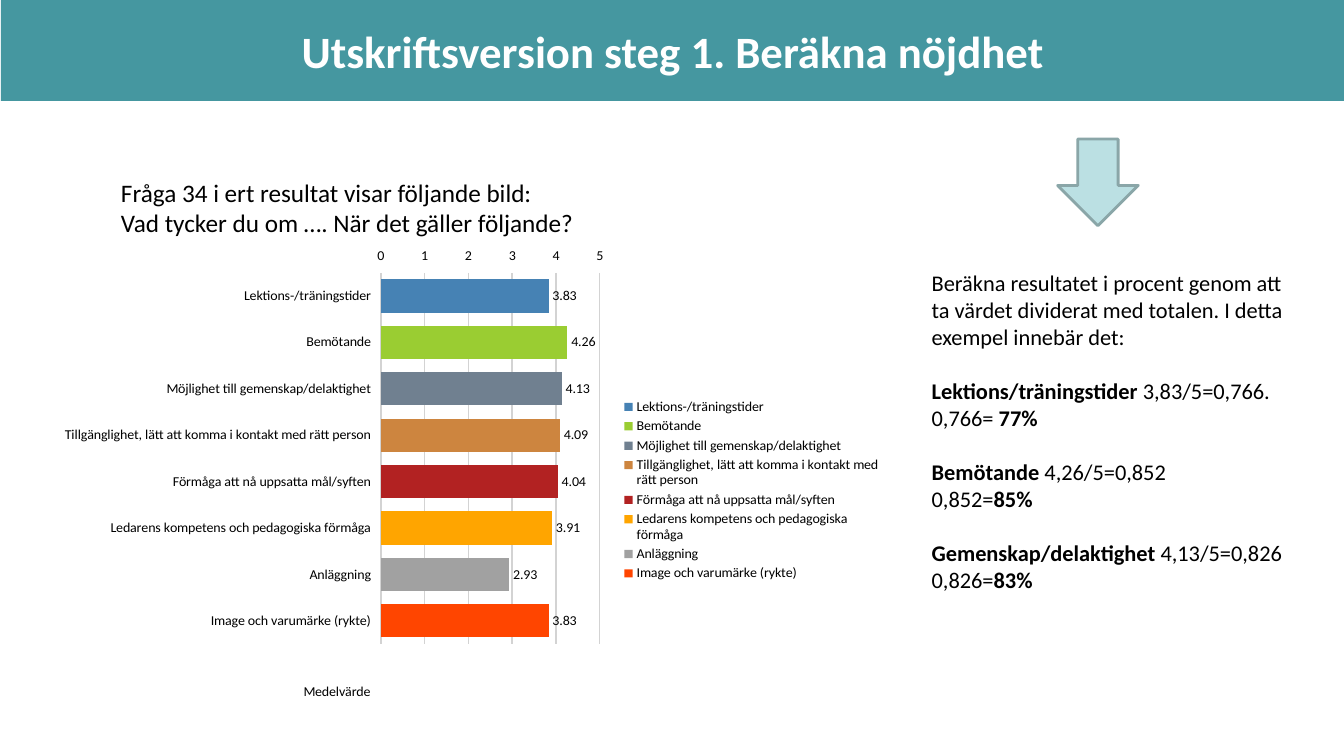
import pptx
import pptx.chart.data
import pptx.dml.color
import pptx.enum.chart
import pptx.enum.shapes
import pptx.enum.text
import pptx.oxml
import pptx.oxml.ns
import pptx.util
from dataclasses import dataclass

Inches = pptx.util.Inches
Pt = pptx.util.Pt
XL = pptx.enum.chart


@dataclass(frozen=True)
class Theme:
    font: str = "Calibri"
    text: str = "000000"
    light: str = "FFFFFF"
    bar: str = "4597A0"
    arrow: str = "BBE0E3"
    arrow_line: str = "8AA6A8"
    grid: str = "D3D3D3"
    title_size: int = 32
    intro_size: int = 18
    body_size: int = 16
    chart_size: int = 10
    gap: float = 19.5


THEME = Theme()

RATINGS = [
    ("Lektions-/träningstider", 3.83, "4682B4"),
    ("Bemötande", 4.26, "9ACD32"),
    ("Möjlighet till gemenskap/delaktighet", 4.13, "708090"),
    ("Tillgänglighet, lätt att komma i kontakt med rätt person", 4.09, "CD853F"),
    ("Förmåga att nå uppsatta mål/syften", 4.04, "B22222"),
    ("Ledarens kompetens och pedagogiska förmåga", 3.91, "FFA500"),
    ("Anläggning", 2.93, "A1A1A1"),
    ("Image och varumärke (rykte)", 3.83, "FF4500"),
]

INTRO = [
    (0, [("Fråga 34 i ert resultat visar följande bild:", False)]),
    (0, [("Vad tycker du om …. När det gäller följande?", False)]),
]

CALCULATION = [
    (0, [("Beräkna resultatet i procent genom att ta värdet dividerat med "
          "totalen. I detta exempel innebär det:", False)]),
    (THEME.gap, [("Lektions/träningstider ", True), ("3,83/5=0,766.", False)]),
    (0, [("0,766= ", False), ("77%", True)]),
    (THEME.gap, [("Bemötande", True), (" 4,26/5=0,852", False)]),
    (0, [("0,852=", False), ("85%", True)]),
    (THEME.gap, [("Gemenskap/delaktighet ", True),
                 ("4,13/5=0,826 0,826=", False), ("83%", True)]),
]


def rgb(value):
    return pptx.dml.color.RGBColor.from_string(value)


def apply(obj, values):
    for name, value in values.items():
        setattr(obj, name, value)


def set_font(font, size, color=THEME.text, bold=False):
    apply(font, {"name": THEME.font, "size": Pt(size), "bold": bold})
    font.color.rgb = rgb(color)


def place(sp, box):
    apply(sp, dict(zip(("left", "top", "width", "height"), map(Inches, box))))


def set_layout(parent, index, frame, inner=False):
    for old in parent.findall(pptx.oxml.ns.qn("c:layout")):
        parent.remove(old)
    target = '<c:layoutTarget val="inner"/>' if inner else ""
    modes = "".join(f'<c:{k}Mode val="edge"/>' for k in "xy")
    sizes = "".join(f'<c:{k} val="{v}"/>' for k, v in zip("xywh", frame))
    parent.insert(index, pptx.oxml.parse_xml(
        f'<c:layout {pptx.oxml.ns.nsdecls("c")}><c:manualLayout>'
        f"{target}{modes}{sizes}</c:manualLayout></c:layout>"))


def add_title_bar(slide, box, text):
    sp = slide.shapes.title
    place(sp, box)
    sp.fill.solid()
    sp.fill.fore_color.rgb = rgb(THEME.bar)
    tf = sp.text_frame
    apply(tf, {"text": text, "word_wrap": True,
               "auto_size": pptx.enum.text.MSO_AUTO_SIZE.NONE,
               "vertical_anchor": pptx.enum.text.MSO_ANCHOR.MIDDLE})
    p = tf.paragraphs[0]
    p.alignment = pptx.enum.text.PP_ALIGN.CENTER
    set_font(p.runs[0].font, THEME.title_size, THEME.light, True)


def add_body(sp, box, paragraphs, size):
    place(sp, box)
    tf = sp.text_frame
    apply(tf, {"word_wrap": True,
               "auto_size": pptx.enum.text.MSO_AUTO_SIZE.NONE,
               "vertical_anchor": pptx.enum.text.MSO_ANCHOR.TOP})
    for i, (before, runs) in enumerate(paragraphs):
        p = tf.add_paragraph() if i else tf.paragraphs[0]
        pPr = p._p.get_or_add_pPr()
        pPr.set("marL", "0")
        pPr.set("indent", "0")
        pPr.append(pptx.oxml.parse_xml(f'<a:buNone {pptx.oxml.ns.nsdecls("a")}/>'))
        apply(p, {"space_before": Pt(before), "space_after": Pt(0),
                  "alignment": pptx.enum.text.PP_ALIGN.LEFT})
        for text, bold in runs:
            r = p.add_run()
            r.text = text
            set_font(r.font, size, bold=bold)


def add_rating_chart(slide, box):
    names, values, colors = zip(*RATINGS)
    data = pptx.chart.data.CategoryChartData()
    data.categories = names
    data.add_series("Column02", values)
    chart = slide.shapes.add_chart(
        XL.XL_CHART_TYPE.BAR_CLUSTERED, *map(Inches, box), data).chart
    set_font(chart.font, THEME.chart_size)
    apply(chart, {"has_title": False, "has_legend": True})

    plot = chart.plots[0]
    apply(plot, {"gap_width": 40, "vary_by_categories": True,
                 "has_data_labels": True})
    labels = plot.data_labels
    apply(labels, {"show_value": True, "number_format": "0.00",
                   "number_format_is_linked": False,
                   "position": XL.XL_LABEL_POSITION.OUTSIDE_END})
    set_font(labels.font, THEME.chart_size)
    series = plot.series[0]
    series.format.fill.solid()
    series.format.fill.fore_color.rgb = rgb(colors[0])
    for i, color in enumerate(colors):
        fill = series.points[i].format.fill
        fill.solid()
        fill.fore_color.rgb = rgb(color)

    cat, val = chart.category_axis, chart.value_axis
    apply(cat, {"reverse_order": True, "crosses": XL.XL_AXIS_CROSSES.MAXIMUM})
    apply(val, {"minimum_scale": 0, "maximum_scale": 5, "major_unit": 1,
                "has_major_gridlines": True})
    for axis in (cat, val):
        axis.major_tick_mark = XL.XL_TICK_MARK.OUTSIDE
        axis.format.line.fill.background()
        set_font(axis.tick_labels.font, THEME.chart_size)
    apply(val.tick_labels, {"number_format": "General",
                            "number_format_is_linked": False})
    grid = val.major_gridlines.format.line
    grid.color.rgb = rgb(THEME.grid)
    grid.width = Pt(1)
    title = val.axis_title
    title.text_frame.text = "Medelvärde"
    set_font(title.text_frame.paragraphs[0].runs[0].font, THEME.chart_size)

    legend = chart.legend
    apply(legend, {"position": XL.XL_LEGEND_POSITION.RIGHT,
                   "include_in_layout": False})
    set_font(legend.font, THEME.chart_size)
    plot_area = chart._chartSpace.chart.plotArea
    set_layout(plot_area, 0, (0.395, 0.02, 0.26, 0.82), inner=True)
    set_layout(legend._element, 1, (0.68, 0.29, 0.31, 0.42))
    set_layout(title._element, 1, (0.3, 0.92))


def add_arrow(slide, box):
    sp = slide.shapes.add_shape(
        pptx.enum.shapes.MSO_SHAPE.DOWN_ARROW, *map(Inches, box))
    sp.shadow.inherit = False
    sp.fill.solid()
    sp.fill.fore_color.rgb = rgb(THEME.arrow)
    sp.line.color.rgb = rgb(THEME.arrow_line)
    sp.line.width = Pt(2)


def main():
    prs = pptx.Presentation()
    apply(prs, {"slide_width": Inches(13.33), "slide_height": Inches(7.5)})
    slide = prs.slides.add_slide(prs.slide_layouts[3])
    intro, calculation = list(slide.placeholders)[1:]
    add_title_bar(slide, (0.01, 0, 13.33, 1),
                  "Utskriftsversion steg 1. Beräkna nöjdhet")
    add_body(intro, (1.1, 1.71, 11.6, 0.71), INTRO, THEME.intro_size)
    add_body(calculation, (9.14, 2.62, 3.79, 3.9), CALCULATION, THEME.body_size)
    add_rating_chart(slide, (0.48, 2.46, 8.35, 4.65))
    add_arrow(slide, (10.49, 1.38, 0.8, 0.86))
    prs.save("out.pptx")


if __name__ == "__main__":
    main()
